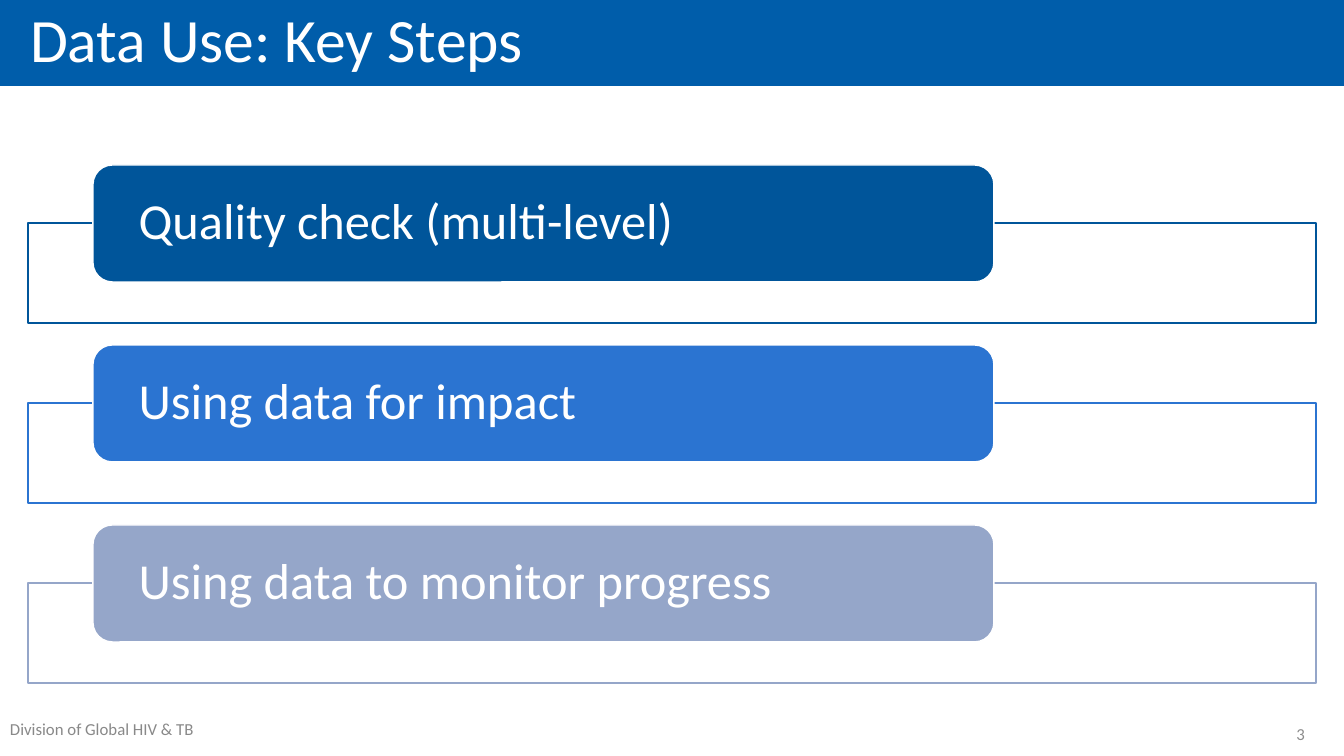
import pptx
import pptx.dml.color
import pptx.enum.shapes
import pptx.enum.text
import pptx.oxml
import pptx.oxml.ns
import pptx.util

SHAPE = pptx.enum.shapes.MSO_SHAPE
ALIGN = pptx.enum.text.PP_ALIGN
ANCHOR = pptx.enum.text.MSO_ANCHOR

WHITE = "FFFFFF"
STEPS = [
    ("Quality check (multi-level)", "00559A"),
    ("Using data for impact", "2B74D1"),
    ("Using data to monitor progress", "95A6C9"),
]
STEP_PITCH = 180


def px(length):
    return pptx.util.Emu(round(length * 914400 / 100.8))


def color(value):
    return pptx.dml.color.RGBColor.from_string(value)


def write(box, text, size, ink, align=ALIGN.LEFT, anchor=ANCHOR.MIDDLE,
          side=10, edge=5, spacing=1.0, font="Calibri"):
    frame = box.text_frame
    frame.word_wrap = True
    frame.vertical_anchor = anchor
    frame.margin_left = frame.margin_right = px(side)
    frame.margin_top = frame.margin_bottom = px(edge)
    para = frame.paragraphs[0]
    para.alignment = align
    para.line_spacing = spacing
    span = para.add_run()
    span.text = text
    span.font.name = font
    span.font.size = pptx.util.Pt(size)
    span.font.color.rgb = color(ink)


class Painter:
    def __init__(self, deck):
        self.page = deck.slides.add_slide(deck.slide_layouts[6])

    def shape(self, kind, left, top, width, height, fill, line=None, opacity=100):
        box = self.page.shapes.add_shape(kind, px(left), px(top), px(width), px(height))
        box.shadow.inherit = False
        box.fill.solid()
        box.fill.fore_color.rgb = color(fill)
        if opacity < 100:
            tint = box.fill._xPr.find(".//" + pptx.oxml.ns.qn("a:srgbClr"))
            alpha = pptx.oxml.parse_xml(
                f'<a:alpha {pptx.oxml.ns.nsdecls("a")} val="{opacity * 1000}"/>')
            tint.append(alpha)
        if line:
            box.line.color.rgb = color(line)
            box.line.width = pptx.util.Pt(1)
        else:
            box.line.fill.background()
        return box

    def label(self, left, top, width, height, text, **style):
        box = self.page.shapes.add_textbox(px(left), px(top), px(width), px(height))
        write(box, text, **style)

    def title(self, text):
        banner = self.shape(SHAPE.RECTANGLE, 0, -1, 1344, 87, "005DAA")
        write(banner, text, size=44, ink=WHITE, side=30, spacing=0.9)

    def step(self, top, text, shade):
        self.shape(SHAPE.RECTANGLE, 28, top + 58, 1288, 100, WHITE, shade, opacity=90)
        box = self.shape(SHAPE.ROUNDED_RECTANGLE, 93, top, 901, 117, shade, WHITE)
        write(box, text, size=36, ink=WHITE, side=40, edge=0, spacing=0.9)


def main():
    deck = pptx.Presentation()
    deck.slide_width = px(1344)
    deck.slide_height = px(756)
    painter = Painter(deck)
    painter.label(0, 714, 219, 40, "Division of Global HIV & TB",
                  size=12, ink="898989", anchor=ANCHOR.TOP)
    painter.title("Data Use: Key Steps")
    painter.label(1200, 714, 115, 40, "3", size=12, ink="8C8C8C", align=ALIGN.RIGHT)
    for index, (text, shade) in enumerate(STEPS):
        painter.step(165 + index * STEP_PITCH, text, shade)
    deck.save("out.pptx")


if __name__ == "__main__":
    main()
